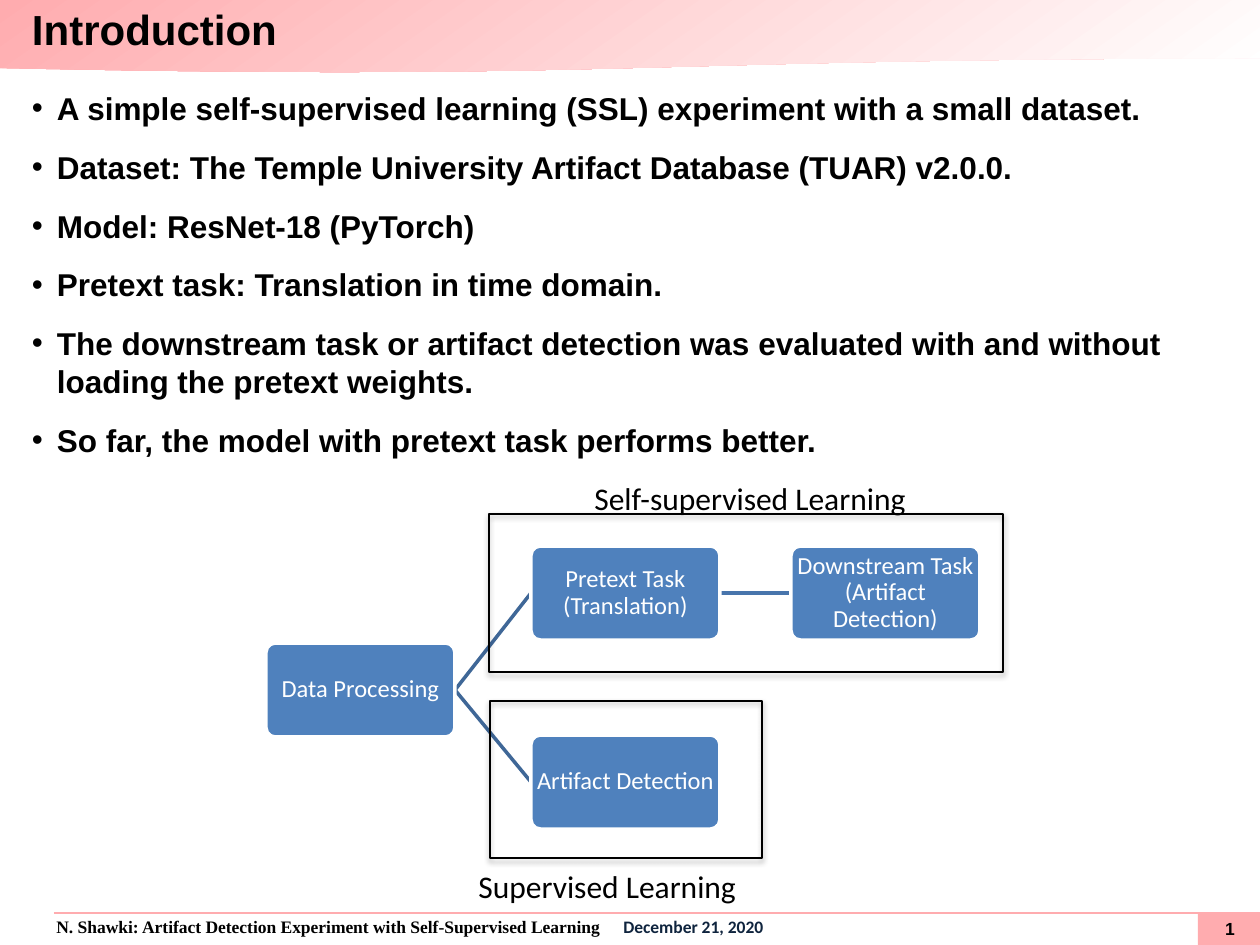
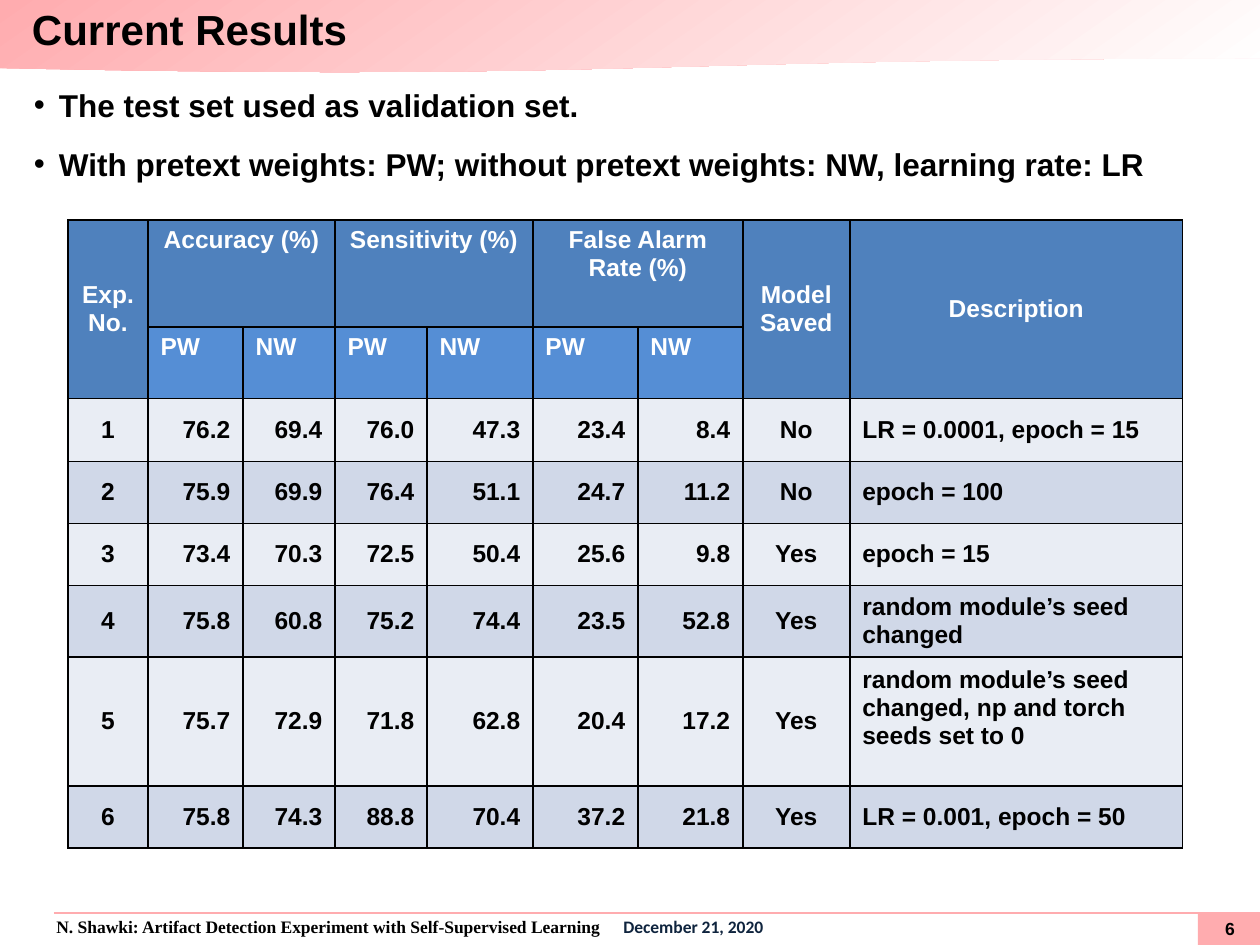
from itertools import product

from lxml.etree import SubElement
from pptx import Presentation
from pptx.dml.color import RGBColor
from pptx.enum.shapes import MSO_CONNECTOR, MSO_SHAPE
from pptx.enum.text import MSO_ANCHOR, MSO_AUTO_SIZE, PP_ALIGN
from pptx.oxml import parse_xml
from pptx.oxml.ns import nsdecls, qn
from pptx.util import Pt

PIXELS_PER_INCH = 126
BLACK, WHITE, PINK, NAVY = "000000", "FFFFFF", "FFACAF", "0F243E"
BLUE, LIGHT_BLUE = "4F81BD", "558ED5"
BAND_COLORS = ("E9EDF4", "D0D8E8")
CONNECTOR_BLUE, LINK_BLUE = "3F6797", "4875AC"

FOOTER = "N. Shawki: Artifact Detection Experiment with Self-Supervised Learning"
DATE = "December 21, 2020"

INTRODUCTION = [
    "A simple self-supervised learning (SSL) experiment with a small dataset.",
    "Dataset: The Temple University Artifact Database (TUAR) v2.0.0.",
    "Model: ResNet-18 (PyTorch)",
    "Pretext task: Translation in time domain.",
    "The downstream task or artifact detection was evaluated with and without "
    "loading the pretext weights.",
    "So far, the model with pretext task performs better.",
]
STEP_SIZE = (189, 94)
STEPS = {
    "Data Processing": (266, 643),
    "Pretext Task (Translation)": (531, 546),
    "Downstream Task (Artifact Detection)": (791, 546),
    "Artifact Detection": (531, 735),
}
STEP_LINKS = [
    ("Data Processing", "Pretext Task (Translation)", CONNECTOR_BLUE),
    ("Pretext Task (Translation)", "Downstream Task (Artifact Detection)", LINK_BLUE),
    ("Data Processing", "Artifact Detection", CONNECTOR_BLUE),
]
LEARNING_FRAMES = [(489, 514, 514, 158), (490, 701, 272, 157)]
LEARNING_LABELS = [
    ("Self-supervised Learning", (582, 473, 359, 50)),
    ("Supervised Learning", (466, 861, 359, 50)),
]

RESULT_NOTES = [
    "The test set used as validation set.",
    "With pretext weights: PW; without pretext weights: NW, learning rate: LR",
]
METRICS = ["Accuracy (%)", "Sensitivity (%)", "False Alarm Rate (%)"]
TALL_HEADERS = {0: "Exp. No.", 7: "Model Saved", 8: "Description"}
RESULTS = [
    ("1", "76.2", "69.4", "76.0", "47.3", "23.4", "8.4", "No", "LR = 0.0001, epoch = 15"),
    ("2", "75.9", "69.9", "76.4", "51.1", "24.7", "11.2", "No", "epoch = 100"),
    ("3", "73.4", "70.3", "72.5", "50.4", "25.6", "9.8", "Yes", "epoch = 15"),
    ("4", "75.8", "60.8", "75.2", "74.4", "23.5", "52.8", "Yes",
     "random module’s seed changed"),
    ("5", "75.7", "72.9", "71.8", "62.8", "20.4", "17.2", "Yes",
     "random module’s seed changed, np and torch seeds set to 0"),
    ("6", "75.8", "74.3", "88.8", "70.4", "37.2", "21.8", "Yes", "LR = 0.001, epoch = 50"),
]
COLUMN_WIDTHS = [80, 95, 92, 92, 106, 105, 105, 107, 333]
ROW_HEIGHTS = [107, 67, 63, 62, 62, 67, 129, 62]
RESULT_ALIGNMENTS = [PP_ALIGN.CENTER] + [PP_ALIGN.RIGHT] * 6 + [PP_ALIGN.CENTER, PP_ALIGN.LEFT]


def px(value):
    return round(value * 914400 / PIXELS_PER_INCH)


def box(bounds):
    return [px(value) for value in bounds]


def color(value):
    return RGBColor.from_string(value)


def add_run(paragraph, text, size, font="Arial", bold=True, fill=BLACK):
    run = paragraph.add_run()
    run.text = text
    run.font.size = Pt(size)
    run.font.name = font
    run.font.bold = bold
    run.font.color.rgb = color(fill)


def set_insets(frame, left=0, top=0, right=0, bottom=0):
    frame.margin_left, frame.margin_top = px(left), px(top)
    frame.margin_right, frame.margin_bottom = px(right), px(bottom)


def add_text_box(slide, bounds):
    frame = slide.shapes.add_textbox(*box(bounds)).text_frame
    frame.word_wrap = True
    return frame


def add_shape(slide, kind, bounds, fill=None, line=None, line_width=1):
    shape = slide.shapes.add_shape(kind, *box(bounds))
    shape.shadow.inherit = False
    if fill:
        shape.fill.solid()
        shape.fill.fore_color.rgb = color(fill)
    else:
        shape.fill.background()
    if line:
        shape.line.color.rgb = color(line)
        shape.line.width = Pt(line_width)
    else:
        shape.line.fill.background()
    return shape


def add_line(slide, start, end, line, width):
    connector = slide.shapes.add_connector(MSO_CONNECTOR.STRAIGHT, *box(start + end))
    connector.line.color.rgb = color(line)
    connector.line.width = Pt(width)
    SubElement(connector._element.spPr, qn("a:effectLst"))


def add_bullets(slide, bounds, lines):
    frame = add_text_box(slide, bounds)
    set_insets(frame)
    for index, line in enumerate(lines):
        paragraph = frame.add_paragraph() if index else frame.paragraphs[0]
        properties = paragraph._p.get_or_add_pPr()
        properties.set("marL", str(px(25)))
        properties.set("indent", str(-px(25)))
        SubElement(properties, qn("a:buFont"), typeface="Arial")
        SubElement(properties, qn("a:buChar"), char="•")
        paragraph.space_after = Pt(12)
        add_run(paragraph, line, 18)


def add_footer(slide, number):
    add_shape(slide, MSO_SHAPE.RECTANGLE, (1198, 912, 63, 33), PINK)
    paragraph = add_text_box(slide, (5, 911, 1256, 33)).paragraphs[0]
    properties = paragraph._p.get_or_add_pPr()
    properties.set("marL", str(px(39)))
    properties.set("indent", "0")
    tabs = SubElement(properties, qn("a:tabLst"))
    SubElement(tabs, qn("a:tab"), pos=str(px(1173)), algn="r")
    paragraph.line_spacing = 0.95
    add_run(paragraph, FOOTER, 10, "Times New Roman")
    add_run(paragraph, "\t" + DATE, 10, "Calibri", fill=NAVY)
    add_line(slide, (54, 913), (1260, 913), PINK, 1.5)
    frame = add_text_box(slide, (1205, 917, 50, 22))
    set_insets(frame)
    frame.vertical_anchor = MSO_ANCHOR.MIDDLE
    frame.paragraphs[0].alignment = PP_ALIGN.CENTER
    add_run(frame.paragraphs[0], str(number), 10)


def add_slide(presentation, title_text, number):
    slide = presentation.slides.add_slide(presentation.slide_layouts[5])
    banner = add_shape(slide, MSO_SHAPE.FLOWCHART_DOCUMENT, (0, 0, 1261, 73), PINK)
    banner.fill.gradient()
    banner.fill.gradient_angle = 305
    for stop, position, shade in zip(banner.fill.gradient_stops, (0, 1), (PINK, WHITE)):
        stop.position = position
        stop.color.rgb = color(shade)
    add_footer(slide, number)

    title = slide.shapes.title
    slide.shapes._spTree.append(title._element)
    title.left, title.top, title.width, title.height = box((0, 0, 1261, 45))
    frame = title.text_frame
    frame.word_wrap = True
    frame.auto_size = MSO_AUTO_SIZE.NONE
    frame.vertical_anchor = MSO_ANCHOR.MIDDLE
    set_insets(frame, left=32, top=13)
    frame.paragraphs[0].alignment = PP_ALIGN.LEFT
    add_run(frame.paragraphs[0], title_text, 24)
    return slide


def add_workflow(slide):
    width, height = STEP_SIZE
    for source, target, shade in STEP_LINKS:
        (left, top), (right, bottom) = STEPS[source], STEPS[target]
        add_line(slide, (left + width, top + height / 2), (right, bottom + height / 2), shade, 2)
    for text, position in STEPS.items():
        step = add_shape(slide, MSO_SHAPE.ROUNDED_RECTANGLE, position + STEP_SIZE, BLUE, WHITE, 2)
        step.adjustments[0] = 0.1
        frame = step.text_frame
        frame.word_wrap = True
        frame.vertical_anchor = MSO_ANCHOR.MIDDLE
        set_insets(frame, 1, 1, 1, 1)
        paragraph = frame.paragraphs[0]
        paragraph.alignment = PP_ALIGN.CENTER
        paragraph.line_spacing = 0.9
        add_run(paragraph, text, 14, "Calibri", False, WHITE)
    for bounds in LEARNING_FRAMES:
        outline = add_shape(slide, MSO_SHAPE.RECTANGLE, bounds, line=BLACK)
        effects = outline._element.spPr.find(qn("a:effectLst"))
        shadow = SubElement(effects, qn("a:outerShdw"), blurRad=str(Pt(3.1)),
                            dist=str(Pt(1.8)), dir="5400000", rotWithShape="0")
        shade = SubElement(shadow, qn("a:srgbClr"), val=BLACK)
        SubElement(shade, qn("a:alpha"), val="35000")
    for text, bounds in LEARNING_LABELS:
        add_run(add_text_box(slide, bounds).paragraphs[0], text, 18, "Calibri", False)


def write_cell(cell, text, alignment, anchor, fill):
    cell.vertical_anchor = anchor
    paragraph = cell.text_frame.paragraphs[0]
    paragraph.alignment = alignment
    add_run(paragraph, text, 14, fill=fill)


def format_cell(cell, fill):
    cell.fill.solid()
    cell.fill.fore_color.rgb = color(fill)
    for index, side in enumerate(("lnL", "lnR", "lnT", "lnB")):
        border = parse_xml(
            f'<a:{side} {nsdecls("a")} w="{Pt(1)}"><a:solidFill>'
            f'<a:srgbClr val="{BLACK}"/></a:solidFill></a:{side}>')
        cell._tc.get_or_add_tcPr().insert(index, border)


def add_results_table(slide):
    bounds = (68, 220, sum(COLUMN_WIDTHS), sum(ROW_HEIGHTS))
    table = slide.shapes.add_table(len(ROW_HEIGHTS), len(COLUMN_WIDTHS), *box(bounds)).table
    for column, width in zip(table.columns, COLUMN_WIDTHS):
        column.width = px(width)
    for row, height in zip(table.rows, ROW_HEIGHTS):
        row.height = px(height)

    for row, column in product(range(len(ROW_HEIGHTS)), range(len(COLUMN_WIDTHS))):
        if row > 1:
            fill = BAND_COLORS[row % 2]
        else:
            fill = LIGHT_BLUE if row == 1 and column not in TALL_HEADERS else BLUE
        format_cell(table.cell(row, column), fill)

    for column, text in TALL_HEADERS.items():
        table.cell(0, column).merge(table.cell(1, column))
        write_cell(table.cell(0, column), text, PP_ALIGN.CENTER, MSO_ANCHOR.MIDDLE, WHITE)
    for index, metric in enumerate(METRICS):
        column = 1 + 2 * index
        table.cell(0, column).merge(table.cell(0, column + 1))
        write_cell(table.cell(0, column), metric, PP_ALIGN.CENTER, MSO_ANCHOR.TOP, WHITE)
        for offset, weights in enumerate(("PW", "NW")):
            write_cell(table.cell(1, column + offset), weights, PP_ALIGN.LEFT,
                       MSO_ANCHOR.TOP, WHITE)
    for row, result in enumerate(RESULTS, 2):
        for column, (text, alignment) in enumerate(zip(result, RESULT_ALIGNMENTS)):
            write_cell(table.cell(row, column), text, alignment, MSO_ANCHOR.MIDDLE, BLACK)
    table.cell(6, 8).margin_bottom = px(33)


def main():
    presentation = Presentation()
    presentation.slide_width, presentation.slide_height = px(1260), px(945)

    introduction = add_slide(presentation, "Introduction", 1)
    add_bullets(introduction, (32, 89, 1197, 782), INTRODUCTION)
    add_workflow(introduction)

    results = add_slide(presentation, "Current Results", 6)
    add_bullets(results, (34, 86, 1196, 113), RESULT_NOTES)
    add_results_table(results)

    presentation.save("out.pptx")


if __name__ == "__main__":
    main()
